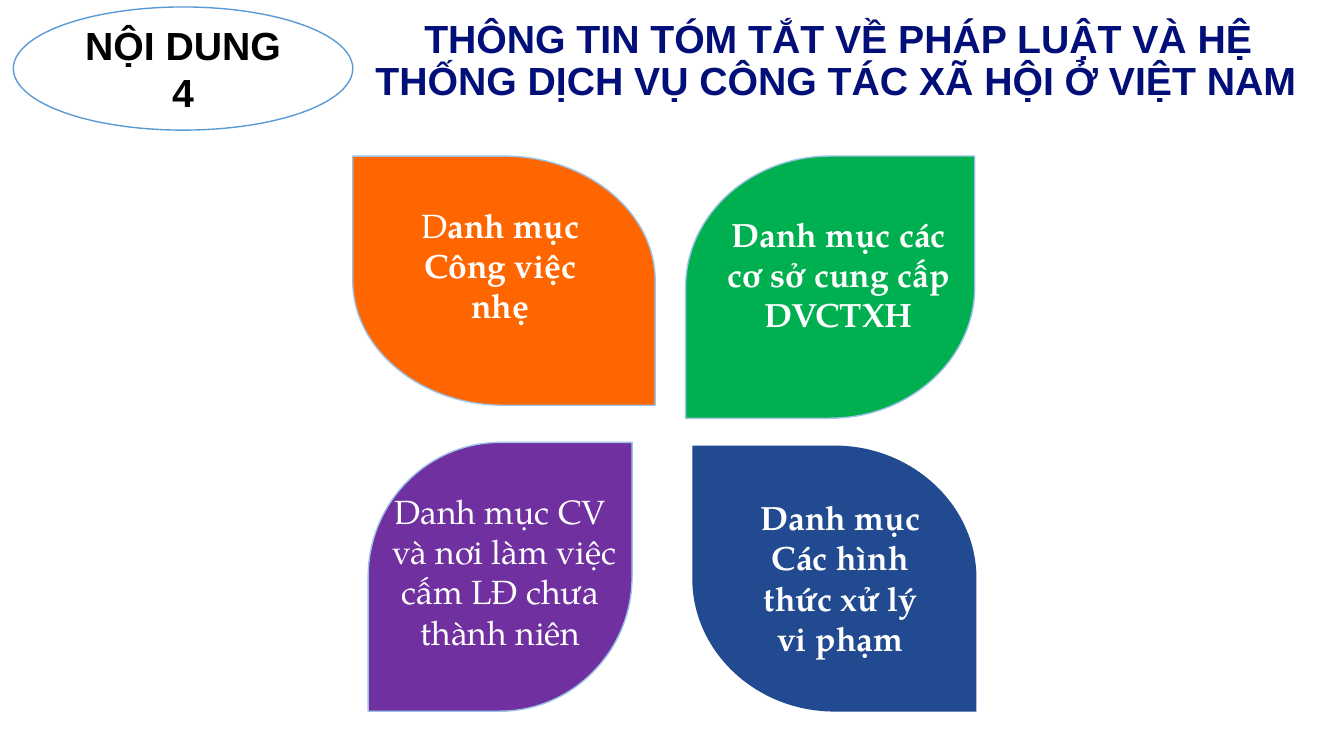
"""Build the slide of four leaves on social work law and services."""
import lxml.etree
import pptx
import pptx.util
import pptx.dml.color
import pptx.enum.shapes
import pptx.enum.text
import pptx.oxml.ns

Pt = pptx.util.Pt
RGB = pptx.dml.color.RGBColor
Anchor = pptx.enum.text.MSO_ANCHOR
qn = pptx.oxml.ns.qn
WHITE = RGB(0xFF, 0xFF, 0xFF)
BLACK = RGB(0, 0, 0)
INK = RGB(0x02, 0x0F, 0x79)
ORANGE = RGB(0xFF, 0x66, 0x00)
GREEN = RGB(0x00, 0xB0, 0x50)
PURPLE = RGB(0x70, 0x30, 0xA0)
NAVY = RGB(0x22, 0x4A, 0x90)
PALE = RGB(0x9C, 0xC3, 0xE6)
BLUE = RGB(0x5A, 0x9B, 0xD5)
SANS, SERIF = "Arial", "TeX Gyre Pagella"
BEND = 0.55

TITLE = "THÔNG TIN TÓM TẮT VỀ PHÁP LUẬT VÀ HỆ THỐNG DỊCH VỤ CÔNG TÁC XÃ HỘI Ở VIỆT NAM"
BADGE = "NỘI DUNG 4"
CORNERS = [(0, 0), (1, 0), (1, 1), (0, 1)]
MIDS = [(0, 0.5), (0.5, 0), (1, 0.5), (0.5, 1)]
RISE, FALL = (0, 2), (1, 3)
LEAVES = [
    dict(box=(252, 111.5, 216, 178), fill=ORANGE, line=PALE, round=FALL,
         label=(288.25, 142.5, 138.25, 94.5),
         text=[[("D", False), ("anh mục Công việc nhẹ", True)]]),
    dict(box=(489.75, 111.5, 206.5, 187.25), fill=GREEN, line=PALE, round=RISE,
         label=(512, 149, 174, 94.5),
         text=[[("Danh mục các cơ sở cung cấp DVCTXH", True)]]),
    dict(box=(263, 316, 188.5, 192), fill=PURPLE, line=PALE, round=RISE,
         label=(257.25, 347, 200.25, 124),
         text=[[("Danh mục CV", False)],
               [(" và nơi làm việc cấm LĐ chưa thành niên", False)]]),
    dict(box=(494.5, 318.25, 203, 190), fill=NAVY, line=None, round=FALL,
         label=(531.5, 351.5, 137.5, 124),
         text=[[("Danh mục Các hình thức xử lý vi phạm", True)]]),
]


def paint(shape, fill, line):
    """Set fill and outline and drop the shadow."""
    shape.shadow.inherit = False
    shape.fill.solid()
    shape.fill.fore_color.rgb = fill
    if line is None:
        shape.line.fill.background()
    else:
        shape.line.color.rgb = line
        shape.line.width = Pt(1)


def write(shape, paras, font, size, color, anchor):
    """Fill a shape with centred paragraphs of (text, bold) runs."""
    frame = shape.text_frame
    frame.word_wrap = True
    frame.auto_size = pptx.enum.text.MSO_AUTO_SIZE.NONE
    frame.vertical_anchor = anchor
    for i, runs in enumerate(paras):
        para = frame.add_paragraph() if i else frame.paragraphs[0]
        para.alignment = pptx.enum.text.PP_ALIGN.CENTER
        for text, bold in runs:
            run = para.add_run()
            run.text = text
            run.font.name = font
            run.font.size = Pt(size)
            run.font.bold = bold
            run.font.color.rgb = color


def curve(step, start, corner, end, wide, high):
    """Turn a line step into a curve that leans on the corner."""
    arc = lxml.etree.Element(qn("a:cubicBezTo"))
    leans = [[a + (c - a) * BEND for a, c in zip(mid, corner)] for mid in (start, end)]
    for x, y in leans + [end]:
        lxml.etree.SubElement(arc, qn("a:pt"), x=str(round(x * wide)), y=str(round(y * high)))
    step.getparent().replace(step, arc)


def petal(shapes, box, rounded):
    """Draw a leaf clockwise from mid left, with the named corners rounded."""
    left, top, wide, high = map(Pt, box)
    stops, bends = [], []
    for k, corner in enumerate(CORNERS):
        end = MIDS[(k + 1) % 4]
        if k in rounded:
            bends.append((len(stops), MIDS[k], corner, end))
        else:
            stops.append(corner)
        stops.append(end)
    pts = [(left + x * wide, top + y * high) for x, y in MIDS[:1] + stops]
    path = shapes.build_freeform(*pts[0])
    path.add_line_segments(pts[1:], close=True)
    leaf = path.convert_to_shape()
    steps = list(leaf.element.iter(qn("a:lnTo")))
    for at, start, corner, end in bends:
        curve(steps[at], start, corner, end, wide, high)
    return leaf


def main():
    """Draw the slide and save it."""
    deck = pptx.Presentation()
    deck.slide_width, deck.slide_height = Pt(960), Pt(540)
    slide = deck.slides.add_slide(deck.slide_layouts[5])
    shapes = slide.shapes

    title = shapes.title
    title.left, title.top, title.width, title.height = map(Pt, (242, 14.25, 713.5, 59.75))
    write(title, [[(TITLE, True), (" ", True)]], SANS, 28, INK, Anchor.MIDDLE)
    para = title.text_frame.paragraphs[0]
    para.line_spacing = 0.9
    para.space_before = Pt(10)
    gap = para.runs[1].font
    gap.name, gap.size = SERIF, Pt(14)

    for item in LEAVES:
        paint(petal(shapes, item["box"], item["round"]), item["fill"], item["line"])
        label = shapes.add_textbox(*map(Pt, item["label"]))
        write(label, item["text"], SERIF, 24, WHITE, Anchor.TOP)

    oval = pptx.enum.shapes.MSO_SHAPE.OVAL
    badge = shapes.add_shape(oval, *map(Pt, (9.5, 5, 242.5, 88)))
    paint(badge, WHITE, BLUE)
    write(badge, [[(BADGE, True)]], SANS, 28, BLACK, Anchor.MIDDLE)
    deck.save("out.pptx")


if __name__ == "__main__":
    main()
